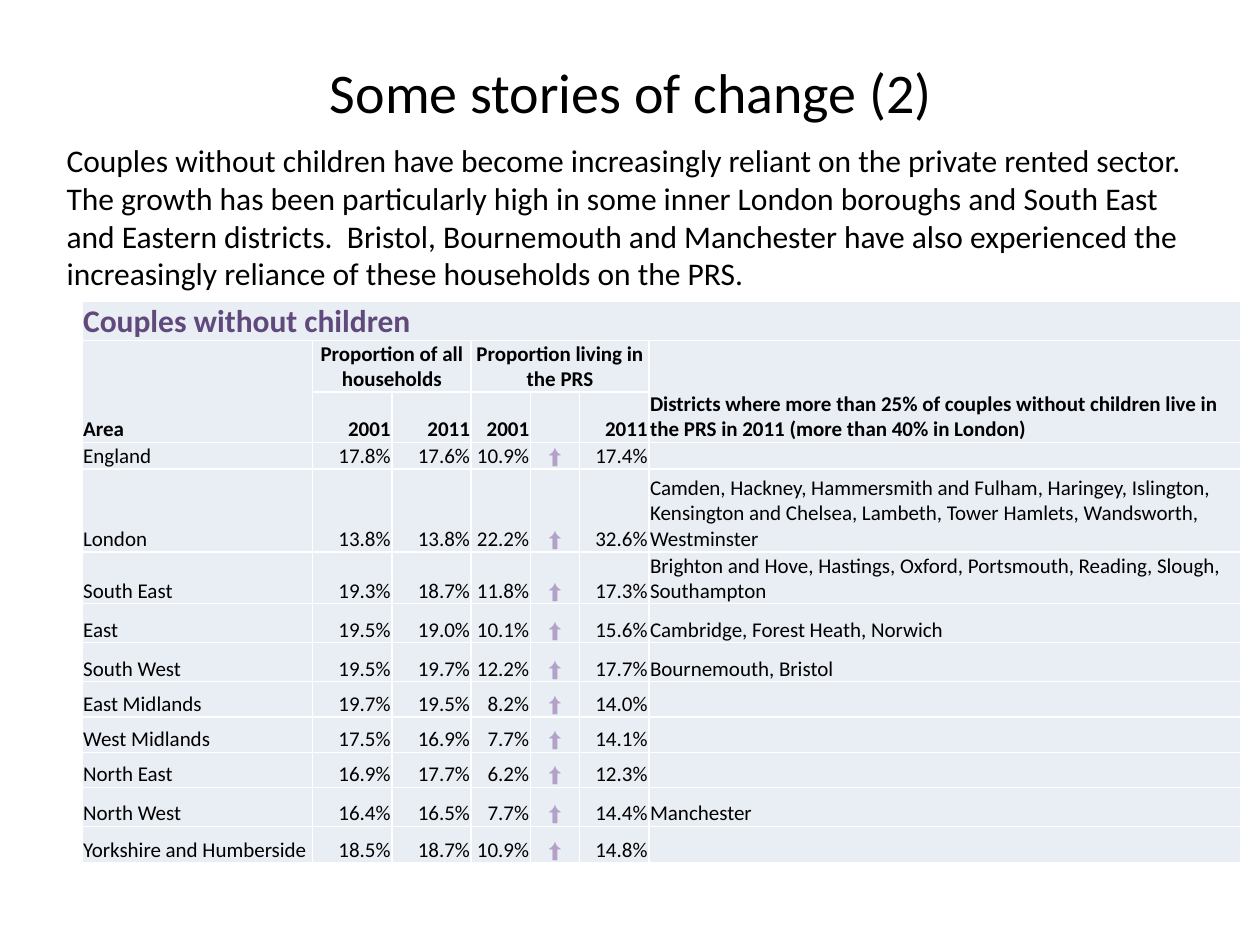
from lxml import etree
from pptx import Presentation
from pptx.dml.color import RGBColor
from pptx.enum import text
from pptx.oxml.ns import qn
from pptx.util import Inches, Pt

COLORS = {"text": "000000", "heading": "604A7B", "arrow": "B3A2C7", "cell": "E9EDF4"}
LEFT, CENTER, RIGHT = text.PP_ALIGN.LEFT, text.PP_ALIGN.CENTER, text.PP_ALIGN.RIGHT

INTRO = (
    "Couples without children have become increasingly reliant on the private rented sector.  "
    "The growth has been particularly high in some inner London boroughs and South East and "
    "Eastern districts.  Bristol, Bournemouth and Manchester have also experienced the "
    "increasingly reliance of these households on the PRS."
)
COLUMN_WIDTHS = [1.83, 0.63, 0.63, 0.47, 0.39, 0.55, 4.7]
ROW_HEIGHTS = [0.3, 0.4, 0.4, 0.21, 0.66, 0.39, 0.31, 0.31, 0.28, 0.28, 0.28, 0.31, 0.29]
COLUMN_ALIGNS = [LEFT, RIGHT, RIGHT, RIGHT, CENTER, RIGHT, LEFT]
HEADER_ROWS = 3
ARROW_COLUMN = 4
# Top-left and bottom-right (row, column) of each merged block
MERGES = [
    ((0, 0), (0, 6)),
    ((1, 0), (2, 0)),
    ((1, 1), (1, 2)),
    ((1, 3), (1, 5)),
    ((1, 6), (2, 6)),
]
HEADERS = [
    ["Couples without children", "", "", "", "", "", ""],
    ["Area", "Proportion of all households", "", "Proportion living in the PRS", "", "",
     "Districts where more than 25% of couples without children live in the PRS in 2011 "
     "(more than 40% in London)"],
    ["", "2001", "2011", "2001", "", "2011", ""],
]
# Area, all households 2001 and 2011, living in the PRS 2001 and 2011, districts
AREAS = [
    ("England", 17.8, 17.6, 10.9, 17.4, ""),
    ("London", 13.8, 13.8, 22.2, 32.6,
     "Camden, Hackney, Hammersmith and Fulham, Haringey, Islington, Kensington and Chelsea, "
     "Lambeth, Tower Hamlets, Wandsworth, Westminster"),
    ("South East", 19.3, 18.7, 11.8, 17.3,
     "Brighton and Hove, Hastings, Oxford, Portsmouth, Reading, Slough, Southampton"),
    ("East", 19.5, 19.0, 10.1, 15.6, "Cambridge, Forest Heath, Norwich"),
    ("South West", 19.5, 19.7, 12.2, 17.7, "Bournemouth, Bristol"),
    ("East Midlands", 19.7, 19.5, 8.2, 14.0, ""),
    ("West Midlands", 17.5, 16.9, 7.7, 14.1, ""),
    ("North East", 16.9, 17.7, 6.2, 12.3, ""),
    ("North West", 16.4, 16.5, 7.7, 14.4, "Manchester"),
    ("Yorkshire and Humberside", 18.5, 18.7, 10.9, 14.8, ""),
]


def area_row(area, all_2001, all_2011, prs_2001, prs_2011, districts):
    """Return the seven cell texts of one area."""
    before = [f"{value:.1f}%" for value in (all_2001, all_2011, prs_2001)]
    return [area, *before, "⬆", f"{prs_2011:.1f}%", districts]


class SlideBuilder:
    def __init__(self, prs, font="Calibri"):
        self.font = font
        self.slide = prs.slides.add_slide(prs.slide_layouts[5])

    def set_text(self, tf, content, size, color="text", bold=False, align=LEFT):
        tf.text = content
        p = tf.paragraphs[0]
        p.alignment = align
        for r in p.runs:
            r.font.name = self.font
            r.font.size = Pt(size)
            r.font.bold = bold
            r.font.color.rgb = RGBColor.from_string(COLORS[color])
        if not content:
            # An empty cell needs its text size too, or its row grows
            etree.SubElement(p._p, qn("a:endParaRPr"), sz=str(size * 100))

    def title(self, content, left, top, width, height):
        sp = self.slide.shapes.title
        sp.left, sp.top, sp.width, sp.height = map(Inches, (left, top, width, height))
        sp.text_frame.vertical_anchor = text.MSO_ANCHOR.MIDDLE
        self.set_text(sp.text_frame, content, 32, align=CENTER)

    def textbox(self, content, left, top, width, height):
        sp = self.slide.shapes.add_textbox(*map(Inches, (left, top, width, height)))
        sp.text_frame.word_wrap = True
        self.set_text(sp.text_frame, content, 18)

    def cell(self, cell, content, **style):
        cell.fill.solid()
        cell.fill.fore_color.rgb = RGBColor.from_string(COLORS["cell"])
        cell.margin_left = cell.margin_right = cell.margin_top = Inches(0.01)
        cell.margin_bottom = 0
        cell.vertical_anchor = text.MSO_ANCHOR.BOTTOM
        self.set_text(cell.text_frame, content, **style)

    def table(self, rows, left, top):
        size = sum(COLUMN_WIDTHS), sum(ROW_HEIGHTS)
        table = self.slide.shapes.add_table(
            len(rows), len(COLUMN_WIDTHS), *map(Inches, (left, top, *size))).table
        table.first_row = table.horz_banding = False
        for column, width in zip(table.columns, COLUMN_WIDTHS):
            column.width = Inches(width)
        for row, height in zip(table.rows, ROW_HEIGHTS):
            row.height = Inches(height)
        for i, row in enumerate(rows):
            for j, content in enumerate(row):
                is_header = i < HEADER_ROWS
                is_group = i == 1 and 0 < j < len(row) - 1
                color = "heading" if i == 0 else "text"
                if j == ARROW_COLUMN and not is_header:
                    color = "arrow"
                self.cell(table.cell(i, j), content, size=18 if i == 0 else 12, color=color,
                          bold=is_header, align=CENTER if is_group else COLUMN_ALIGNS[j])
        for first, last in MERGES:
            table.cell(*first).merge(table.cell(*last))


def main():
    prs = Presentation()
    prs.slide_width, prs.slide_height = Inches(10), Inches(7.5)
    s = SlideBuilder(prs)
    s.title("Some stories of change (2)", 0.51, 0.21, 9, 1.02)
    s.textbox(INTRO, 0.43, 1.07, 9.21, 1.31)
    s.table(HEADERS + [area_row(*area) for area in AREAS], 0.65, 2.39)
    prs.save("out.pptx")


if __name__ == "__main__":
    main()
